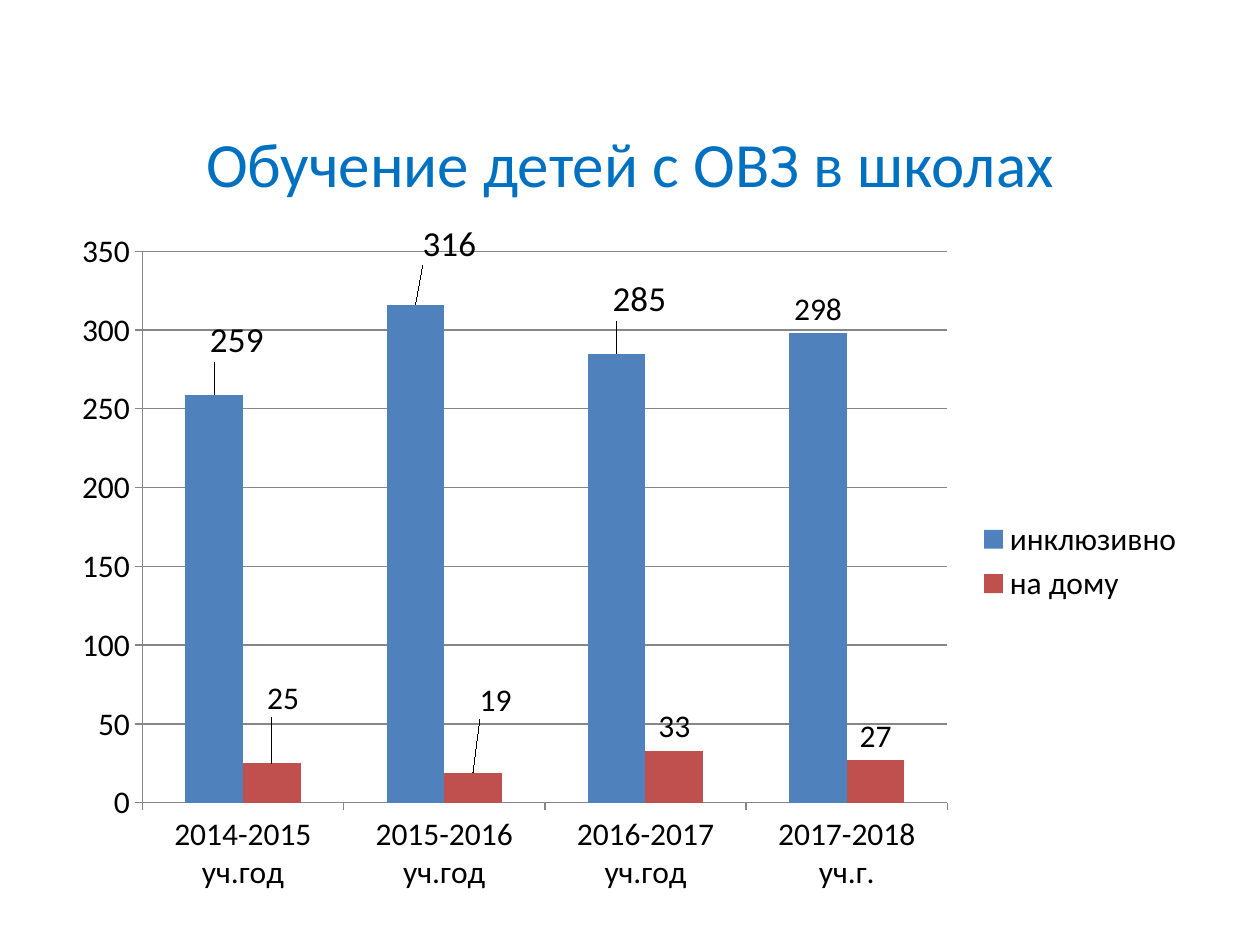
from lxml import etree
from pptx import Presentation
from pptx import util as u
from pptx.chart.data import CategoryChartData
from pptx.dml.color import RGBColor
from pptx.enum import chart as c
from pptx.enum import text
from pptx.oxml.ns import qn

COLORS = {"title": "0070C0", "text": "000000", "line": "868686",
          "inclusive": "4F81BD", "home": "C0504D"}
FONT = "Calibri"
YEARS = ["2014-2015 уч.год", "2015-2016 уч.год", "2016-2017 уч.год", "2017-2018 уч.г."]
# Name, values, colour, size of moved labels, label shifts as shares of the chart
SERIES = [
    ("инклюзивно", (259, 316, 285, 298), "inclusive", 20,
     [(0.02, -0.04), (0.03, -0.05), (0.02, -0.04)]),
    ("на дому", (25, 19, 33, 27), "home", 18,
     [(0.01, -0.06), (0.02, -0.07)]),
]


def style_font(font, size, color):
    font.name = FONT
    font.size = u.Pt(size)
    font.color.rgb = RGBColor.from_string(COLORS[color])


def make_layout(**settings):
    layout = etree.Element(qn("c:layout"))
    manual = etree.SubElement(layout, qn("c:manualLayout"))
    for name, value in settings.items():
        etree.SubElement(manual, qn(f"c:{name}")).set("val", str(value))
    return layout


def add_title(slide, words):
    title = slide.shapes.title
    title.left, title.top = u.Cm(1.27), u.Cm(2.18)
    title.width, title.height = u.Cm(22.86), u.Cm(2.18)
    title.text_frame.vertical_anchor = text.MSO_ANCHOR.MIDDLE
    paragraph = title.text_frame.paragraphs[0]
    paragraph.text = words
    paragraph.alignment = text.PP_ALIGN.CENTER
    style_font(paragraph.font, 36, "title")


def style_line(line):
    line.color.rgb = RGBColor.from_string(COLORS["line"])
    line.width = u.Pt(0.75)


def style_axes(chart):
    for axis in (chart.category_axis, chart.value_axis):
        axis.major_tick_mark = c.XL_TICK_MARK.OUTSIDE
        axis.minor_tick_mark = c.XL_TICK_MARK.NONE
        style_line(axis.format.line)
    axis = chart.value_axis
    axis.minimum_scale, axis.maximum_scale, axis.major_unit = 0, 350, 50
    axis.has_major_gridlines = True
    style_line(axis.major_gridlines.format.line)


def style_series(series, color, moved_size, shifts):
    series.format.fill.solid()
    series.format.fill.fore_color.rgb = RGBColor.from_string(COLORS[color])
    labels = series.data_labels
    labels.show_value = True
    labels.position = c.XL_LABEL_POSITION.OUTSIDE_END
    style_font(labels.font, 18, "text")
    # Labels moved away from their bars
    for index in range(len(shifts)):
        label = series.points[index].data_label
        style_font(label.font, moved_size, "text")
        label.position = c.XL_LABEL_POSITION.OUTSIDE_END
    for element, (x, y) in zip(series._element.iter(qn("c:dLbl")), shifts):
        element.insert(1, make_layout(x=x, y=y))


def add_column_chart(slide):
    data = CategoryChartData()
    data.categories = YEARS
    for name, values, *_ in SERIES:
        data.add_series(name, values)
    chart = slide.shapes.add_chart(
        c.XL_CHART_TYPE.COLUMN_CLUSTERED,
        u.Cm(1.27), u.Cm(4.37), u.Cm(22.86), u.Cm(13.9), data).chart
    style_font(chart.font, 18, "text")
    chart.has_title = False
    chart.has_legend = True
    chart.legend.position = c.XL_LEGEND_POSITION.RIGHT
    chart.legend.include_in_layout = False
    style_axes(chart)

    plot = chart.plots[0]
    plot.gap_width, plot.overlap = 150, 0
    plot.vary_by_categories = False
    for series, (_, _, color, size, shifts) in zip(plot.series, SERIES):
        style_series(series, color, size, shifts)

    # Plot area inside the chart
    area = chart._chartSpace.chart.plotArea
    for old in area.findall(qn("c:layout")):
        area.remove(old)
    area.insert(0, make_layout(layoutTarget="inner", xMode="edge", yMode="edge",
                               x=0.07, y=0.05, w=0.71, h=0.8))


def main():
    presentation = Presentation()
    presentation.slide_width, presentation.slide_height = u.Cm(25.4), u.Cm(19.05)
    slide = presentation.slides.add_slide(presentation.slide_layouts[5])
    add_title(slide, "Обучение детей с ОВЗ в школах")
    add_column_chart(slide)
    presentation.save("out.pptx")


if __name__ == "__main__":
    main()
